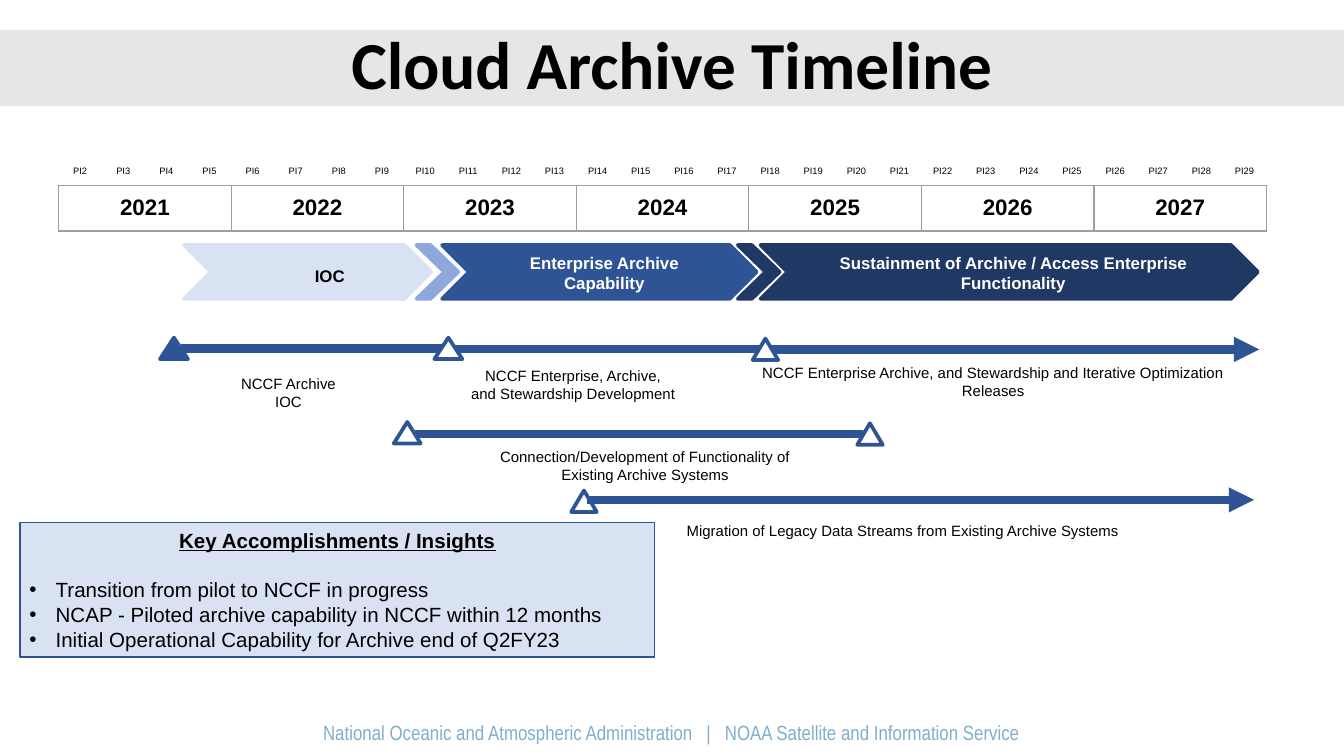
from lxml.etree import SubElement
from pptx import Presentation
from pptx.dml.color import RGBColor
from pptx.enum.shapes import MSO_CONNECTOR, MSO_SHAPE
from pptx.enum.text import MSO_ANCHOR, PP_ALIGN
from pptx.oxml.ns import qn
from pptx.util import Pt

BLACK = RGBColor(0x00, 0x00, 0x00)
WHITE = RGBColor(0xFF, 0xFF, 0xFF)
GREY = RGBColor(0xE7, 0xE6, 0xE6)
BORDER = RGBColor(0x9E, 0x9E, 0x9E)
PALE = RGBColor(0xD8, 0xE2, 0xF3)
LIGHT = RGBColor(0x8D, 0xA9, 0xDB)
BLUE = RGBColor(0x2F, 0x54, 0x96)
NAVY = RGBColor(0x1F, 0x38, 0x64)
FOOTER = RGBColor(0x80, 0xAE, 0xCC)

NO_GRID_STYLE = "{2D5ABB26-0587-4C30-8999-92F81FD0307C}"
TABLE_LEFT, TABLE_WIDTH = 31.4, 647.1


def format_text(tf, size, color=BLACK, bold=False, font="Arial", align=PP_ALIGN.CENTER):
    for p in tf.paragraphs:
        p.alignment = align
        for r in p.runs:
            r.font.size = Pt(size)
            r.font.name = font
            r.font.bold = bold
            r.font.color.rgb = color


def set_margins(box, horizontal, vertical):
    box.margin_left = box.margin_right = Pt(horizontal)
    box.margin_top = box.margin_bottom = Pt(vertical)


def add_text(slide, x, y, w, h, text, size, **style):
    tf = slide.shapes.add_textbox(Pt(x), Pt(y), Pt(w), Pt(h)).text_frame
    tf.word_wrap = True
    set_margins(tf, 5, 2.7)
    tf.text = text
    format_text(tf, size, **style)
    return tf


def add_shape(slide, kind, x, y, w, h, fill=None, line=None, width=2):
    sp = slide.shapes.add_shape(kind, Pt(x), Pt(y), Pt(w), Pt(h))
    sp.shadow.inherit = False
    if fill is None:
        sp.fill.background()
    else:
        sp.fill.solid()
        sp.fill.fore_color.rgb = fill
    if line is None:
        sp.line.fill.background()
    else:
        sp.line.color.rgb = line
        sp.line.width = Pt(width)
    return sp


def add_chevron(slide, x, w, color, point=0.5):
    sp = add_shape(slide, MSO_SHAPE.CHEVRON, x, 131.3, w, 28.8, color, color)
    sp.adjustments[0] = point


def add_milestone(slide, x, y, w, fill=None):
    add_shape(slide, MSO_SHAPE.ISOSCELES_TRIANGLE, x, y, w, 11.5, fill, BLUE)


def add_line(slide, x1, x2, y, arrow=False):
    line = slide.shapes.add_connector(MSO_CONNECTOR.STRAIGHT, Pt(x1), Pt(y), Pt(x2), Pt(y))
    line.line.color.rgb = BLUE
    line.line.width = Pt(4.5)
    if arrow:
        SubElement(line.line._get_or_add_ln(), qn("a:tailEnd"), type="triangle")
    SubElement(line._element.spPr, qn("a:effectLst"))


def add_cell_border(cell):
    tc_pr = cell._tc.get_or_add_tcPr()
    for i, side in enumerate(("lnL", "lnR", "lnT", "lnB")):
        ln = tc_pr.makeelement(qn(f"a:{side}"), {"w": str(Pt(0.75))})
        fill = SubElement(ln, qn("a:solidFill"))
        SubElement(fill, qn("a:srgbClr"), val=str(BORDER))
        tc_pr.insert(i, ln)


def add_row(slide, y, h, labels, size, margins, bold=False, border=False):
    frame = slide.shapes.add_table(
        1, len(labels), Pt(TABLE_LEFT), Pt(y), Pt(TABLE_WIDTH), Pt(h))
    table = frame.table
    table.first_row = table.horz_banding = False
    table._tbl.tblPr.find(qn("a:tableStyleId")).text = NO_GRID_STYLE
    for column, cell, label in zip(table.columns, table.rows[0].cells, labels):
        column.width = Pt(TABLE_WIDTH / len(labels))
        set_margins(cell, *margins)
        cell.text = label
        cell.fill.background()
        format_text(cell.text_frame, size, bold=bold)
        if border:
            add_cell_border(cell)


def add_insights(slide, heading, items):
    sp = add_shape(slide, MSO_SHAPE.RECTANGLE, 10.8, 280.1, 339.8, 72, PALE, BLUE, 0.75)
    tf = sp.text_frame
    tf.word_wrap = True
    tf.vertical_anchor = MSO_ANCHOR.TOP
    set_margins(tf, 5, 2.7)
    tf.text = "\n".join([heading, *items])
    format_text(tf, 11, align=PP_ALIGN.LEFT)
    title, *bullets = tf.paragraphs
    title.alignment = PP_ALIGN.CENTER
    title.runs[0].font.bold = title.runs[0].font.underline = True
    for p in bullets:
        p_pr = p._p.get_or_add_pPr()
        p_pr.set("marL", str(Pt(14)))
        p_pr.set("indent", str(-Pt(14)))
        SubElement(p_pr, qn("a:buFont"), typeface="Arial")
        SubElement(p_pr, qn("a:buChar"), char="•")
        p.line_spacing = Pt(13.4)
    bullets[0].space_before = Pt(12.8)


def add_title(slide, text):
    sp = add_shape(slide, MSO_SHAPE.RECTANGLE, 0, 16, 720, 41, GREY)
    tf = sp.text_frame
    tf.vertical_anchor = MSO_ANCHOR.MIDDLE
    tf.text = text
    format_text(tf, 36, bold=True, font="Calibri")
    tf.paragraphs[0].line_spacing = 0.9


def add_phases(slide):
    add_chevron(slide, 98.6, 132.5, PALE)
    add_chevron(slide, 223.2, 22.3, LIGHT, 0.667)
    add_chevron(slide, 236.9, 168.5, BLUE)
    add_chevron(slide, 395.3, 22.3, NAVY, 0.667)
    add_chevron(slide, 407.5, 266.4, NAVY)
    for x, y, w, h, text, color in (
        (141, 139.7, 71.3, 16.6, "IOC", BLACK),
        (261.4, 132.5, 124.6, 27.4, "Enterprise Archive Capability", WHITE),
        (424, 132.5, 237.6, 27.4,
         "Sustainment of Archive / Access Enterprise Functionality", WHITE),
    ):
        add_text(slide, x, y, w, h, text, 9, color=color, bold=True)


def add_tracks(slide):
    for x1, x2, y, arrow in (
        (97.2, 244, 186.8, False),
        (244, 414, 187, False),
        (414, 674.6, 187.2, True),
        (222.5, 462.2, 232.6, False),
        (314.6, 671.8, 267.8, True),
    ):
        add_line(slide, x1, x2, y, arrow)
    for x, y, w, fill in (
        (85.7, 180.9, 15, BLUE),
        (232.7, 180.9, 15, WHITE),
        (403.2, 181.4, 13.7, WHITE),
        (211, 226.1, 14.4, None),
        (459.2, 226.8, 13.7, None),
        (306, 262.8, 13.7, None),
    ):
        add_milestone(slide, x, y, w, fill)
    for x, y, w, h, text in (
        (108.9, 198, 91.4, 25.2, "NCCF Archive\nIOC"),
        (221.8, 193.7, 170.6, 25.2, "NCCF Enterprise, Archive,\nand Stewardship Development"),
        (398.9, 192.2, 266.4, 25.2,
         "NCCF Enterprise Archive, and Stewardship and Iterative Optimization Releases"),
        (261.4, 236.9, 168.5, 25.2,
         "Connection/Development of Functionality of Existing Archive Systems"),
        (325.4, 276.9, 316.8, 15.1,
         "Migration of Legacy Data Streams from Existing Archive Systems"),
    ):
        add_text(slide, x, y, w, h, text, 8)


def main():
    """Build the cloud archive timeline slide."""
    prs = Presentation()
    prs.slide_width, prs.slide_height = Pt(720), Pt(405)
    slide = prs.slides.add_slide(prs.slide_layouts[6])
    add_text(slide, 0, 383.2, 720, 21.6,
             "National Oceanic and Atmospheric Administration   |   "
             "NOAA Satellite and Information Service",
             11, color=FOOTER, font="Arial Narrow")
    add_title(slide, "Cloud Archive Timeline")
    add_row(slide, 86.2, 5, [f"PI{n}" for n in range(2, 30)], 5, (5.5, 2.7))
    add_row(slide, 99.3, 22.3, [str(y) for y in range(2021, 2028)], 12, (5, 5),
            bold=True, border=True)
    add_phases(slide)
    add_tracks(slide)
    add_insights(slide, "Key Accomplishments / Insights", (
        "Transition from pilot to NCCF in progress",
        "NCAP - Piloted archive capability in NCCF within 12 months",
        "Initial Operational Capability for Archive end of Q2FY23",
    ))
    prs.save("out.pptx")


if __name__ == "__main__":
    main()
